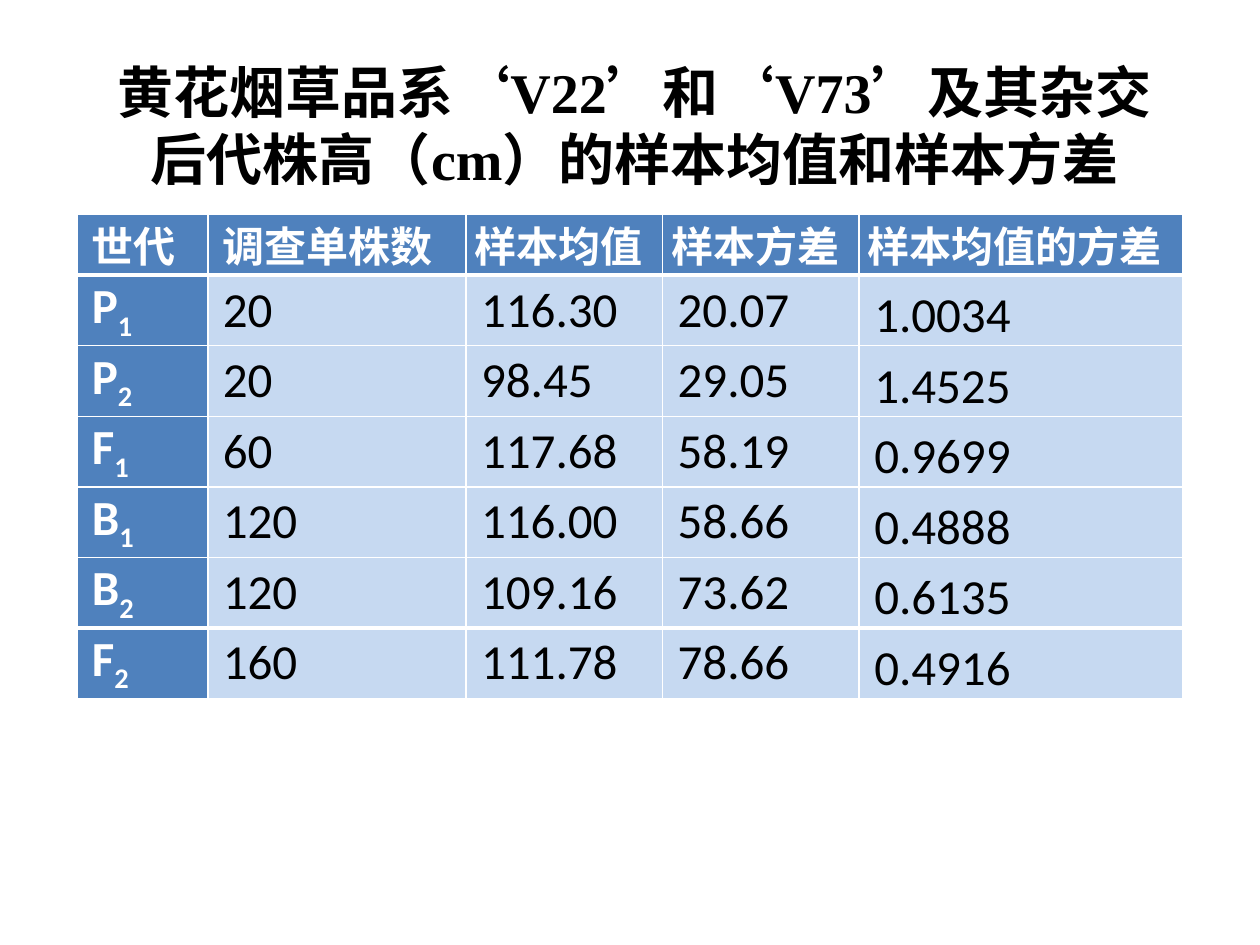
from lxml import etree
from pptx import Presentation
from pptx import util as u
from pptx.dml.color import RGBColor
from pptx.enum import lang, text
from pptx.oxml.ns import qn

TITLE = "黄花烟草品系‘V22’和‘V73’及其杂交后代株高（cm）的样本均值和样本方差"
HEAD = ["世代", "调查单株数", "样本均值", "样本方差", "样本均值的方差"]
ROWS = [
    ("P1", "20", "116.30", "20.07", "1.0034"),
    ("P2", "20", "98.45", "29.05", "1.4525"),
    ("F1", "60", "117.68", "58.19", "0.9699"),
    ("B1", "120", "116.00", "58.66", "0.4888"),
    ("B2", "120", "109.16", "73.62", "0.6135"),
    ("F2", "160", "111.78", "78.66", "0.4916"),
]
WIDTHS = [1.04, 2.05, 1.56, 1.56, 2.57]
HEAD_H, ROW_H = 0.48, 0.56
BLUE, PALE, WHITE, BLACK = "4F81BD", "C6D9F1", "FFFFFF", "000000"
INSETS = {"margin_left": 0.07, "margin_right": 0.07, "margin_top": 0, "margin_bottom": 0}
MID, LOW = text.MSO_ANCHOR.MIDDLE, text.MSO_ANCHOR.BOTTOM


def rgb(code):
    return RGBColor.from_string(code)


def add_run(para, words, size, color, bold, face="Calibri"):
    run = para.add_run()
    run.text = words
    look = {"size": u.Pt(size), "bold": bold, "name": face,
            "language_id": lang.MSO_LANGUAGE_ID.SIMPLIFIED_CHINESE}
    for key, value in look.items():
        setattr(run.font, key, value)
    run.font.color.rgb = rgb(color)
    return run


def add_edges(cell, top, bottom):
    """Draw white cell borders; top and bottom are widths in points."""
    props = cell._tc.get_or_add_tcPr()
    for side, width in (("L", 1), ("R", 1), ("T", top), ("B", bottom)):
        line = etree.SubElement(props, qn(f"a:ln{side}"), w=str(u.Pt(width)))
        fill = etree.SubElement(line, qn("a:solidFill"))
        etree.SubElement(fill, qn("a:srgbClr"), val=WHITE)


def fill_cell(cell, words, row, col):
    head, key = row == 0, col == 0
    last = len(ROWS)
    for name, value in INSETS.items():
        setattr(cell, name, u.Inches(value))
    cell.vertical_anchor = LOW if col == len(HEAD) - 1 and not head else MID
    add_edges(cell, 3 if row in (1, last) else 1, 3 if row in (0, last - 1) else 1)
    cell.fill.solid()
    cell.fill.fore_color.rgb = rgb(BLUE if head or key else PALE)

    para = cell.text_frame.paragraphs[0]
    if not head or col < 2:
        props = para._p.get_or_add_pPr()
        props.set("marL", "0")
        props.set("indent", str(u.Inches(0.05)))
    strong = head or key
    look = (24 if head else 28, WHITE if strong else BLACK, strong)
    if key and not head:
        add_run(para, words[0], *look)
        sub = add_run(para, words[1], *look)
        sub.font._element.set("baseline", "-25000")
    else:
        add_run(para, words, *look)


def add_title(slide):
    title = slide.shapes.title
    place = {"left": 0.75, "top": 0.44, "width": 8.58, "height": 1.1}
    for key, value in place.items():
        setattr(title, key, u.Inches(value))
    frame = title.text_frame
    frame.word_wrap = True
    frame.auto_size = text.MSO_AUTO_SIZE.NONE
    frame.vertical_anchor = MID
    para = frame.paragraphs[0]
    para.alignment = text.PP_ALIGN.CENTER
    add_run(para, TITLE, 32, BLACK, True, "Times New Roman")


def add_grid(slide):
    data = [HEAD, *ROWS]
    high = HEAD_H + ROW_H * len(ROWS)
    box = [u.Inches(n) for n in (0.61, 1.7, sum(WIDTHS), high)]
    table = slide.shapes.add_table(len(data), len(HEAD), *box).table
    for col, width in zip(table.columns, WIDTHS):
        col.width = u.Inches(width)
    for r, line in enumerate(data):
        table.rows[r].height = u.Inches(ROW_H if r else HEAD_H)
        for c, words in enumerate(line):
            fill_cell(table.cell(r, c), words, r, c)


def main():
    deck = Presentation()
    deck.slide_width, deck.slide_height = u.Inches(10), u.Inches(7.5)
    slide = deck.slides.add_slide(deck.slide_layouts.get_by_name("Title Only"))
    add_title(slide)
    add_grid(slide)
    deck.save("out.pptx")


if __name__ == "__main__":
    main()
